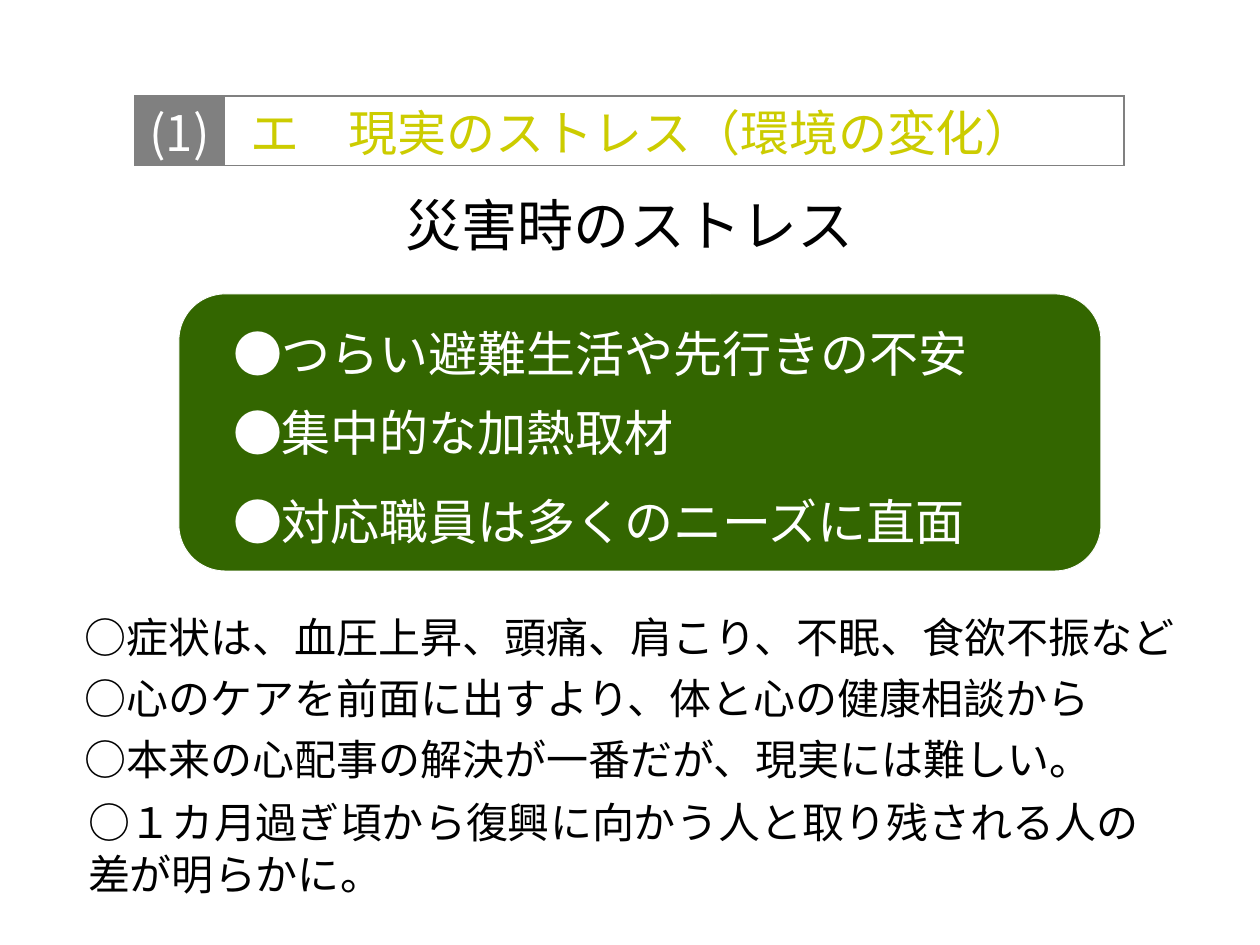
import pptx
import pptx.dml.color
import pptx.enum.shapes
import pptx.enum.text
import pptx.oxml
import pptx.oxml.ns
import pptx.util
import lxml.etree

PX = 914400 // 126
FONT = "Noto Sans CJK JP"
BLACK = pptx.dml.color.RGBColor(0x00, 0x00, 0x00)
WHITE = pptx.dml.color.RGBColor(0xFF, 0xFF, 0xFF)
GREEN = pptx.dml.color.RGBColor(0x33, 0x66, 0x00)
GRAY = pptx.dml.color.RGBColor(0x80, 0x80, 0x80)
YELLOW = pptx.dml.color.RGBColor(0xCC, 0xCC, 0x00)
LEFT = pptx.enum.text.PP_ALIGN.LEFT
CENTER = pptx.enum.text.PP_ALIGN.CENTER


def write(paragraph, text, size, color, align=LEFT, leading=None, before=0, latin=FONT):
    """Fill a paragraph with one unbulleted run; leading and before are in points."""
    properties = paragraph._p.get_or_add_pPr()
    properties.set("marL", "0")
    properties.set("indent", "0")
    lxml.etree.SubElement(properties, pptx.oxml.ns.qn("a:buNone"))
    paragraph.alignment = align
    paragraph.space_before = pptx.util.Pt(before)
    if leading:
        paragraph.line_spacing = pptx.util.Pt(leading)
    run = paragraph.add_run()
    run.text = text
    run.font.size = pptx.util.Pt(size)
    run.font.color.rgb = color
    run.font.name = latin
    east_asian = lxml.etree.SubElement(run.font._element, pptx.oxml.ns.qn("a:ea"))
    east_asian.set("typeface", FONT)


def set_frame(shape, left, top, width, height, inset):
    """Place a text shape and give it equal insets, all in px."""
    shape.left, shape.top = left * PX, top * PX
    shape.width, shape.height = width * PX, height * PX
    frame = shape.text_frame
    frame.word_wrap = True
    frame.auto_size = pptx.enum.text.MSO_AUTO_SIZE.NONE
    frame.margin_left = frame.margin_right = inset * PX
    frame.margin_top = frame.margin_bottom = inset * PX
    return frame


deck = pptx.Presentation()
deck.slide_width, deck.slide_height = 1260 * PX, 945 * PX
slide = deck.slides.add_slide(deck.slide_layouts[3])
title, stresses, advice = slide.placeholders

# Green panel, behind the list of stresses
panel = slide.shapes.add_shape(
    pptx.enum.shapes.MSO_SHAPE.ROUNDED_RECTANGLE, 179 * PX, 294 * PX, 922 * PX, 277 * PX)
panel.shadow.inherit = False
panel.fill.solid()
panel.fill.fore_color.rgb = GREEN
panel.line.color.rgb = WHITE
panel.line.width = pptx.util.Pt(0.5)
slide.shapes._spTree.insert(2, panel._element)

heading = set_frame(title, 382, 195, 496, 59, 0)
heading.vertical_anchor = pptx.enum.text.MSO_ANCHOR.MIDDLE
write(heading.paragraphs[0], "災害時のストレス", 32, BLACK, CENTER)

# Each list: placeholder, box in px, text size, colour, leading, (space before, line)
lists = [
    (stresses, (228, 316, 794, 238), 28, WHITE, 35, [
        (0, "●つらい避難生活や先行きの不安"),
        (10, "●集中的な加熱取材"),
        (16, "●対応職員は多くのニーズに直面"),
    ]),
    (advice, (79, 604, 1126, 180), 24, BLACK, 30, [
        (0, "○症状は、血圧上昇、頭痛、肩こり、不眠、食欲不振など"),
        (5, "○心のケアを前面に出すより、体と心の健康相談から"),
        (5, "○本来の心配事の解決が一番だが、現実には難しい。"),
    ]),
]
for placeholder, box, size, color, leading, lines in lists:
    frame = set_frame(placeholder, *box, 5)
    frame.vertical_anchor = pptx.enum.text.MSO_ANCHOR.TOP
    for number, (before, line) in enumerate(lines):
        paragraph = frame.add_paragraph() if number else frame.paragraphs[0]
        write(paragraph, line, size, color, leading=leading, before=before)

recovery = set_frame(slide.shapes.add_textbox(0, 0, PX, PX), 83, 789, 1092, 112, 5)
write(recovery.paragraphs[0],
      "○１カ月過ぎ頃から復興に向かう人と取り残される人の差が明らかに。",
      24, BLACK, leading=30)

# Section bar
section = slide.shapes.add_table(1, 2, 135 * PX, 96 * PX, 989 * PX, 69 * PX).table
section.first_row = section.horz_banding = False
section_cells = [
    (89, 5, "(1)", CENTER, WHITE, GRAY, FONT),
    (900, 27, "エ　現実のストレス（環境の変化）", LEFT, YELLOW, WHITE, "Arial"),
]
for column, (width, indent, text, align, color, fill, latin) in enumerate(section_cells):
    section.columns[column].width = width * PX
    cell = section.cell(0, column)
    cell.margin_left, cell.margin_right = indent * PX, 5 * PX
    cell.margin_top, cell.margin_bottom = 17 * PX, 0
    for side in ("lnL", "lnR", "lnT", "lnB"):
        cell._tc.get_or_add_tcPr().append(pptx.oxml.parse_xml(
            f'<a:{side} {pptx.oxml.ns.nsdecls("a")} w="12700"><a:solidFill>'
            f'<a:srgbClr val="{GRAY}"/></a:solidFill></a:{side}>'))
    cell.fill.solid()
    cell.fill.fore_color.rgb = fill
    write(cell.text_frame.paragraphs[0], text, 28, color, align, leading=30, latin=latin)

deck.save("out.pptx")
